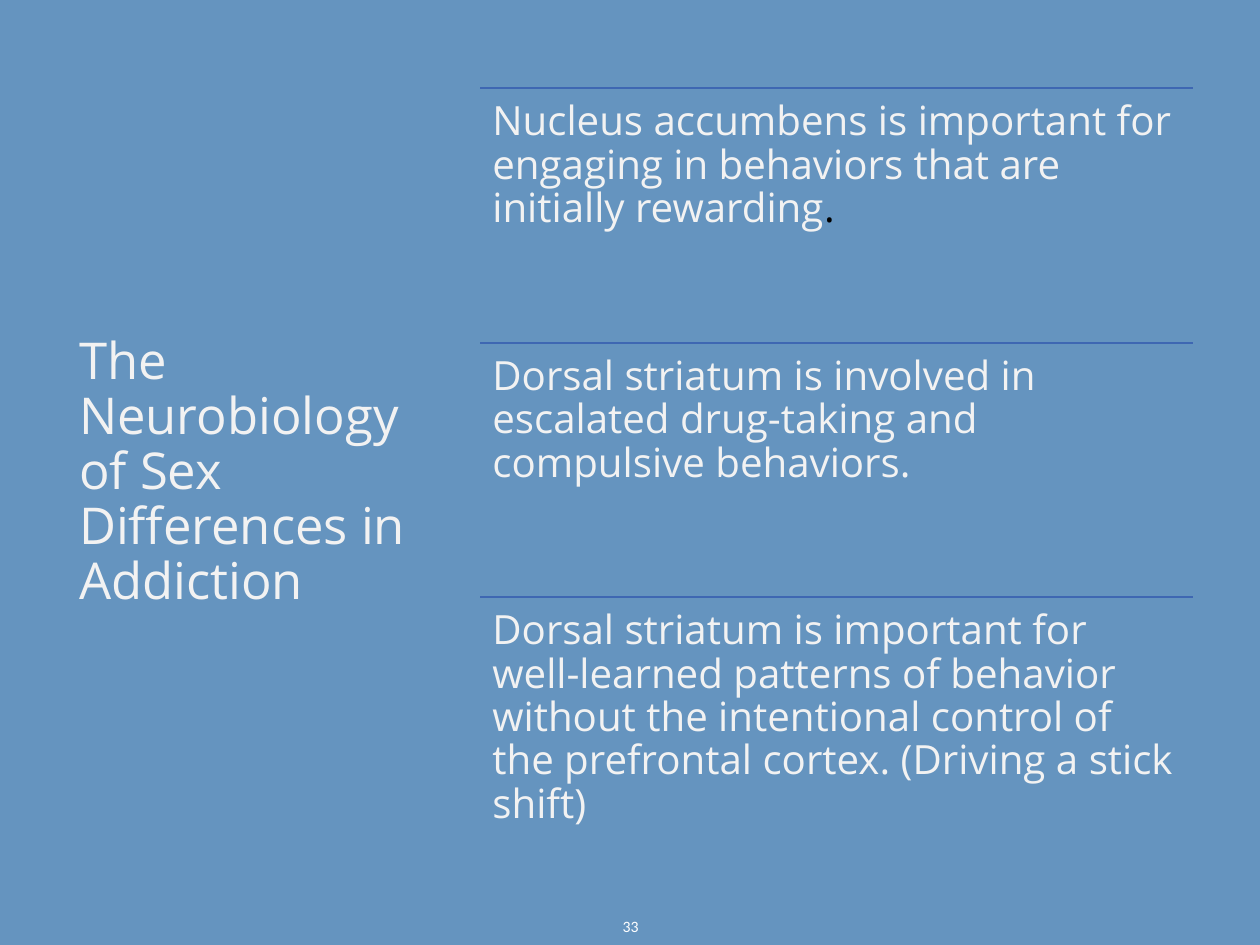
from lxml import etree
from pptx import Presentation
from pptx.dml.color import RGBColor
from pptx.enum.shapes import MSO_CONNECTOR
from pptx.enum.text import MSO_ANCHOR, PP_ALIGN
from pptx.oxml.ns import qn
from pptx.util import Inches, Pt

STRAIGHT = MSO_CONNECTOR.STRAIGHT
TOP, MIDDLE = MSO_ANCHOR.TOP, MSO_ANCHOR.MIDDLE
LEFT, CENTER = PP_ALIGN.LEFT, PP_ALIGN.CENTER

BACKGROUND, RULE = "6594BF", "3E67B2"
LIGHT, WHITE, BLACK = "F2F2F2", "FFFFFF", "000000"

TITLE = "The Neurobiology of Sex Differences in Addiction"
FINDINGS = [
    [("Nucleus accumbens is important for engaging in behaviors that are "
      "initially rewarding", LIGHT), (".", BLACK)],
    [("Dorsal striatum is involved in escalated drug-taking and compulsive "
      "behaviors.", LIGHT)],
    [("Dorsal striatum is important for well-learned patterns of behavior "
      "without the intentional control of the prefrontal cortex. "
      "(Driving a stick shift)", LIGHT)],
]


def color(value):
    """Turn a hex string into a colour."""
    return RGBColor.from_string(value)


def add_text(page, spans, left, top, width, height, size, font="Open Sans",
             anchor=TOP, align=LEFT, spacing=0.9, inset=0.05):
    """Place a wrapped text box made of (text, colour) spans."""
    box = page.shapes.add_textbox(
        Inches(left), Inches(top), Inches(width), Inches(height))
    frame = box.text_frame
    frame.word_wrap = True
    frame.vertical_anchor = anchor
    frame.margin_left = frame.margin_right = Inches(0.1)
    frame.margin_top = frame.margin_bottom = Inches(inset)
    para = frame.paragraphs[0]
    para.alignment = align
    para.line_spacing = spacing
    for text, tint in spans:
        span = para.add_run()
        span.text = text
        span.font.name = font
        span.font.size = Pt(size)
        span.font.color.rgb = color(tint)


def add_rule(page, left, top, width):
    """Draw a thin horizontal line without a shadow."""
    rule = page.shapes.add_connector(
        STRAIGHT, Inches(left), Inches(top), Inches(left + width), Inches(top))
    rule.line.color.rgb = color(RULE)
    rule.line.width = Pt(1)
    etree.SubElement(rule._element.spPr, qn("a:effectLst"))


def add_findings(page, left, top, width, height):
    """Stack the findings in equal rows, each under a rule."""
    row_height = height / len(FINDINGS)
    for index, spans in enumerate(FINDINGS):
        row_top = top + index * row_height
        add_rule(page, left, row_top, width)
        add_text(page, spans, left, row_top, width, row_height, size=23, inset=0.1)


def add_title(page, left, top, width, height):
    """Place the title, centred vertically in its column."""
    add_text(page, [(TITLE, LIGHT)], left, top, width, height, size=29, anchor=MIDDLE)


def add_page_number(page, left, top, width, height):
    """Place the page number at the foot of the slide."""
    add_text(page, [("33", WHITE)], left, top, width, height, size=9,
             font="Calibri", anchor=MIDDLE, align=CENTER, spacing=1.0)


def main():
    """Build the slide and save the deck."""
    deck = Presentation()
    deck.slide_width, deck.slide_height = Inches(10), Inches(7.5)
    page = deck.slides.add_slide(deck.slide_layouts[6])
    page.background.fill.solid()
    page.background.fill.fore_color.rgb = color(BACKGROUND)
    add_page_number(page, 3.88, 7.15, 2.25, 0.4)
    add_title(page, 0.53, 0.7, 2.8, 6.11)
    add_findings(page, 3.81, 0.7, 5.66, 6.06)
    deck.save("out.pptx")


if __name__ == "__main__":
    main()
